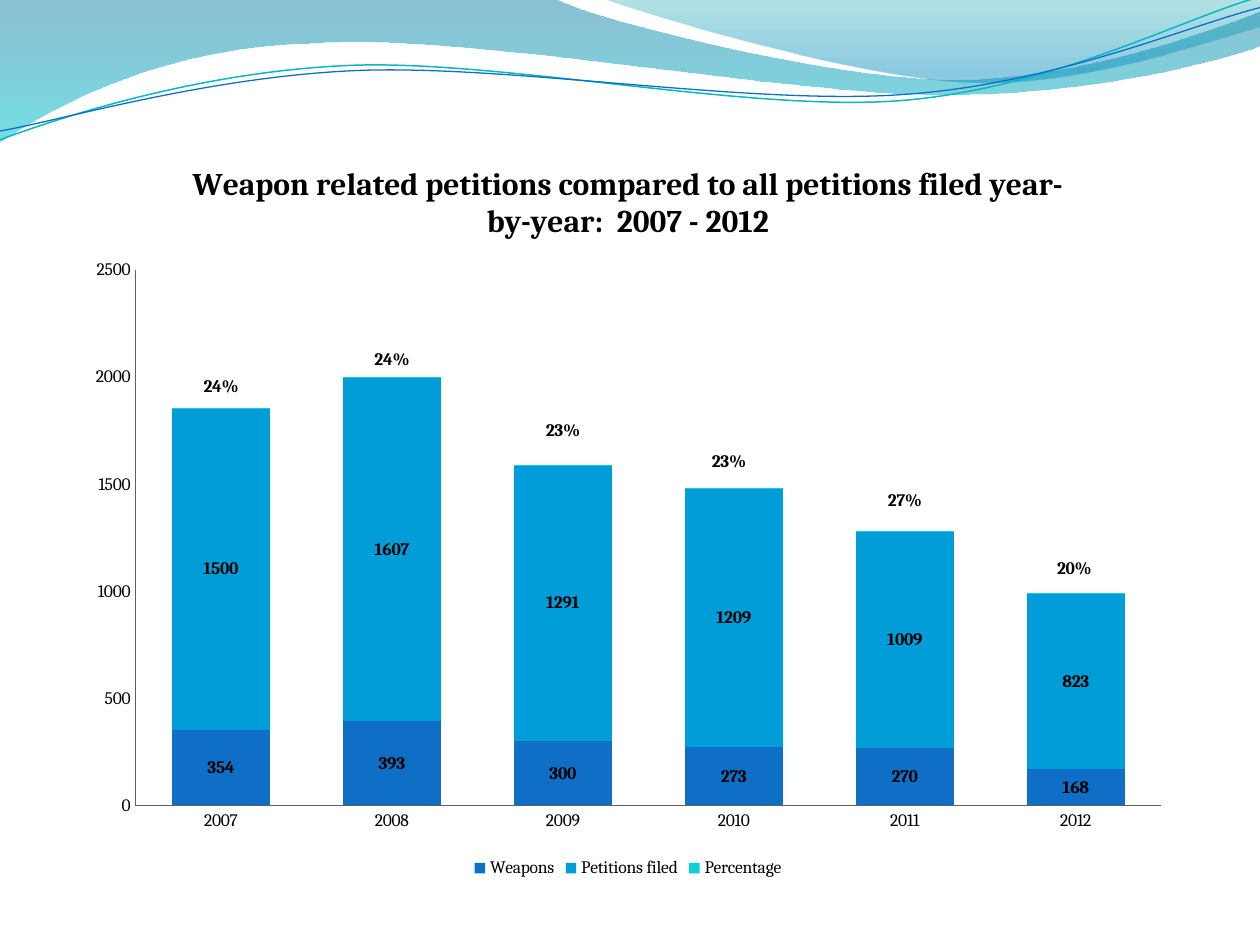
import math

import pptx
import pptx.chart.data
import pptx.dml.color
import pptx.enum.chart
import pptx.oxml
import pptx.oxml.ns
import pptx.util

Cm, Pt = pptx.util.Cm, pptx.util.Pt
qn, nsdecls = pptx.oxml.ns.qn, pptx.oxml.ns.nsdecls
INCH = 2.54  # centimetres


def color(hex_text):
    return pptx.dml.color.RGBColor.from_string(hex_text)


def write_text(frame, text, font="Cambria", size=10, bold=False, ink="000000"):
    para = frame.paragraphs[0]
    span = para.add_run()
    span.text = text
    span.font.name = font
    span.font.size = Pt(size)
    span.font.bold = bold
    span.font.color.rgb = color(ink)


deck = pptx.Presentation()
deck.slide_width, deck.slide_height = Cm(10 * INCH), Cm(7.5 * INCH)
page = deck.slides.add_slide(deck.slide_layouts[6])

# Header waves, in inches on the slide: a start point, then line ends (2 numbers)
# or Bezier curves (6 numbers). Stops are (position, colour, opacity in %).
waves = [
    dict(box=(-0.01, -0.01, 10.02, 1.14), turn=0, start=(0, 0),
         stops=[(0, "0074A1", 45), (1, "00C6CF", 55)], steps=[
        (4.4, -0.01), (4.76, 0.17, 6.64, 0.63, 7.58, 0.63),
        (8.53, 0.63, 9.58, 0.26, 10, 0.09), (10.01, 0.36),
        (9.83, 0.44, 8.7, 0.76, 7.46, 0.75),
        (6.22, 0.75, 3.82, 0.28, 2.57, 0.34),
        (1.29, 0.36, 0.46, 0.83, -0.01, 1.13), (0, 0)]),
    dict(box=(4.79, -0.01, 5.21, 0.7), turn=0, start=(4.79, -0.01),
         stops=[(0, "00A1A9", 30), (0.8, "008BBF", 45)], steps=[
        (5.09, 0.11, 6.82, 0.62, 7.69, 0.65),
        (8.56, 0.69, 9.61, 0.32, 10, 0.21), (10, 0), (4.79, -0.01)]),
    dict(box=(-0.02, 0.22, 10.02, 0.71), turn=357.3, start=(0, 1.11),
         line=("0AB8BF", 0.85), steps=[
        (0.48, 0.93, 1.58, 0.57, 2.77, 0.52),
        (3.95, 0.47, 5.93, 0.89, 7.13, 0.8),
        (8.33, 0.71, 9.38, 0.15, 9.98, -0.02)]),
    dict(box=(-0.02, 0.3, 10.03, 0.58), turn=357.3, start=(0, 1.04),
         line=("0F6FC6", 0.75), steps=[
        (0.47, 0.96, 1.64, 0.61, 2.83, 0.56),
        (4.03, 0.51, 5.97, 0.84, 7.17, 0.75),
        (8.36, 0.67, 9.41, 0.21, 10, 0.06)]),
]
line_group = page.shapes.add_group_shape()
for wave in waves:
    shapes = line_group.shapes if "line" in wave else page.shapes
    builder = shapes.build_freeform(*[Cm(v * INCH) for v in wave["start"]])
    builder.add_line_segments([[Cm(v * INCH) for v in step[-2:]] for step in wave["steps"]],
                              close="stops" in wave)
    shape = builder.convert_to_shape()
    left, top, width, height = wave["box"]
    shape.left, shape.top = Cm(left * INCH), Cm(top * INCH)
    shape.width, shape.height = Cm(width * INCH), Cm(height * INCH)
    shape.rotation = wave["turn"]
    shape.shadow.inherit = False

    # Bend the segments, with points relative to the unrotated box
    outline = shape.element.find(".//" + qn("a:path"))
    outline.set("w", str(shape.width))
    outline.set("h", str(shape.height))
    angle = math.radians(-wave["turn"])
    for segment, step in zip(list(outline), [wave["start"]] + wave["steps"]):
        points = ""
        for x, y in zip(step[::2], step[1::2]):
            dx, dy = x - left - width / 2, y - top - height / 2
            local_x = width / 2 + dx * math.cos(angle) - dy * math.sin(angle)
            local_y = height / 2 + dx * math.sin(angle) + dy * math.cos(angle)
            points += f'<a:pt x="{Cm(local_x * INCH)}" y="{Cm(local_y * INCH)}"/>'
        tag = "cubicBezTo" if len(step) == 6 else segment.tag.split("}")[1]
        outline.replace(segment, pptx.oxml.parse_xml(
            f'<a:{tag} {nsdecls("a")}>{points}</a:{tag}>'))

    if "line" in wave:
        shape.fill.background()
        shape.line.color.rgb = color(wave["line"][0])
        shape.line.width = Pt(wave["line"][1])
        continue
    shape.line.fill.background()
    shape.fill.gradient()
    shape.fill.gradient_angle = 270
    for stop, (position, tint, _) in zip(shape.fill.gradient_stops, wave["stops"]):
        stop.position = position
        stop.color.rgb = color(tint)
    for tint, (_, _, opacity) in zip(shape.element.spPr.iter(qn("a:srgbClr")), wave["stops"]):
        tint.append(pptx.oxml.parse_xml(f'<a:alpha {nsdecls("a")} val="{opacity * 1000}"/>'))
# Lines lie in front of the filled waves
page.shapes.element.append(line_group.element)

# Chart data
series_table = [
    ("Weapons", (354, 393, 300, 273, 270, 168), "0F6FC6", "General"),
    ("Petitions filed", (1500, 1607, 1291, 1209, 1009, 823), "009DD9", "General"),
    ("Percentage", (0.24, 0.24, 0.23, 0.23, 0.27, 0.2), "0BD0D9", "0%"),
]
data = pptx.chart.data.CategoryChartData()
data.categories = [str(year) for year in range(2007, 2013)]
for name, values, _, number_format in series_table:
    data.add_series(name, values, number_format)

# Stacked columns
chart_width, chart_height = 22.38, 15.06
chart = page.shapes.add_chart(
    pptx.enum.chart.XL_CHART_TYPE.COLUMN_STACKED,
    Cm(1.47), Cm(2.74), Cm(chart_width), Cm(chart_height), data).chart
chart.font.name = "Cambria"
chart.font.size = Pt(10)
chart.font.color.rgb = color("000000")
chart.has_title = True
write_text(chart.chart_title.text_frame,
           "Weapon related petitions compared to all petitions filed year-by-year:  2007 - 2012",
           size=18, bold=True)
chart.chart_title.include_in_layout = False
chart.has_legend = True
chart.legend.position = pptx.enum.chart.XL_LEGEND_POSITION.BOTTOM
chart.legend.include_in_layout = False

for axis in (chart.category_axis, chart.value_axis):
    axis.has_major_gridlines = False
    axis.major_tick_mark = pptx.enum.chart.XL_TICK_MARK.NONE
    axis.minor_tick_mark = pptx.enum.chart.XL_TICK_MARK.NONE
    axis.format.line.color.rgb = color("606060")
    axis.format.line.width = Pt(0.75)
chart.value_axis.minimum_scale = 0
chart.value_axis.maximum_scale = 2500
chart.value_axis.major_unit = 500

plot = chart.plots[0]
plot.gap_width = 75
plot.overlap = 100
plot.vary_by_categories = False
for series, (_, _, tint, number_format) in zip(plot.series, series_table):
    series.format.fill.solid()
    series.format.fill.fore_color.rgb = color(tint)
    labels = series.data_labels
    labels.show_value = True
    labels.number_format = number_format
    labels.number_format_is_linked = False
    labels.font.bold = True
    labels.font.size = Pt(10)
    labels.font.color.rgb = color("000000")

# Plot area, in centimetres inside the chart
layout_xml = f'<c:layout {nsdecls("c")}><c:manualLayout>%s</c:manualLayout></c:layout>'
plot_area = chart.element.find(".//" + qn("c:plotArea"))
for old_layout in plot_area.findall(qn("c:layout")):
    plot_area.remove(old_layout)
plot_area.insert(0, pptx.oxml.parse_xml(layout_xml % (
    '<c:layoutTarget val="inner"/><c:xMode val="edge"/><c:yMode val="edge"/>'
    f'<c:x val="{1.26 / chart_width}"/><c:y val="{2.7 / chart_height}"/>'
    f'<c:w val="{20.68 / chart_width}"/><c:h val="{10.8 / chart_height}"/>')))

# Percentage labels raised above the columns: shift right and up, in centimetres
label_shifts = [(0, 0.44), (0, 0.34), (0, 0.69), (-0.1, 0.54), (0, 0.62), (-0.03, 0.5)]
percentage = plot.series[2]
for index in range(len(label_shifts)):
    label = percentage.points[index].data_label
    label.font.bold = True
    label.font.size = Pt(10)
    label.font.color.rgb = color("000000")
label_list = percentage.data_labels._element
for mark, (right, up) in zip(label_list.findall(qn("c:dLbl")), label_shifts):
    mark.insert(1, pptx.oxml.parse_xml(layout_xml % (
        f'<c:x val="{right / chart_width}"/><c:y val="{-up / chart_height}"/>')))
    mark.insert(2, pptx.oxml.parse_xml(
        f'<c:numFmt {nsdecls("c")} formatCode="0%" sourceLinked="0"/>'))

# No leader lines between the raised labels and their columns
for leader in label_list.findall(qn("c:showLeaderLines")):
    label_list.remove(leader)
label_list.append(pptx.oxml.parse_xml(f'<c:showLeaderLines {nsdecls("c")} val="0"/>'))

deck.save("out.pptx")
